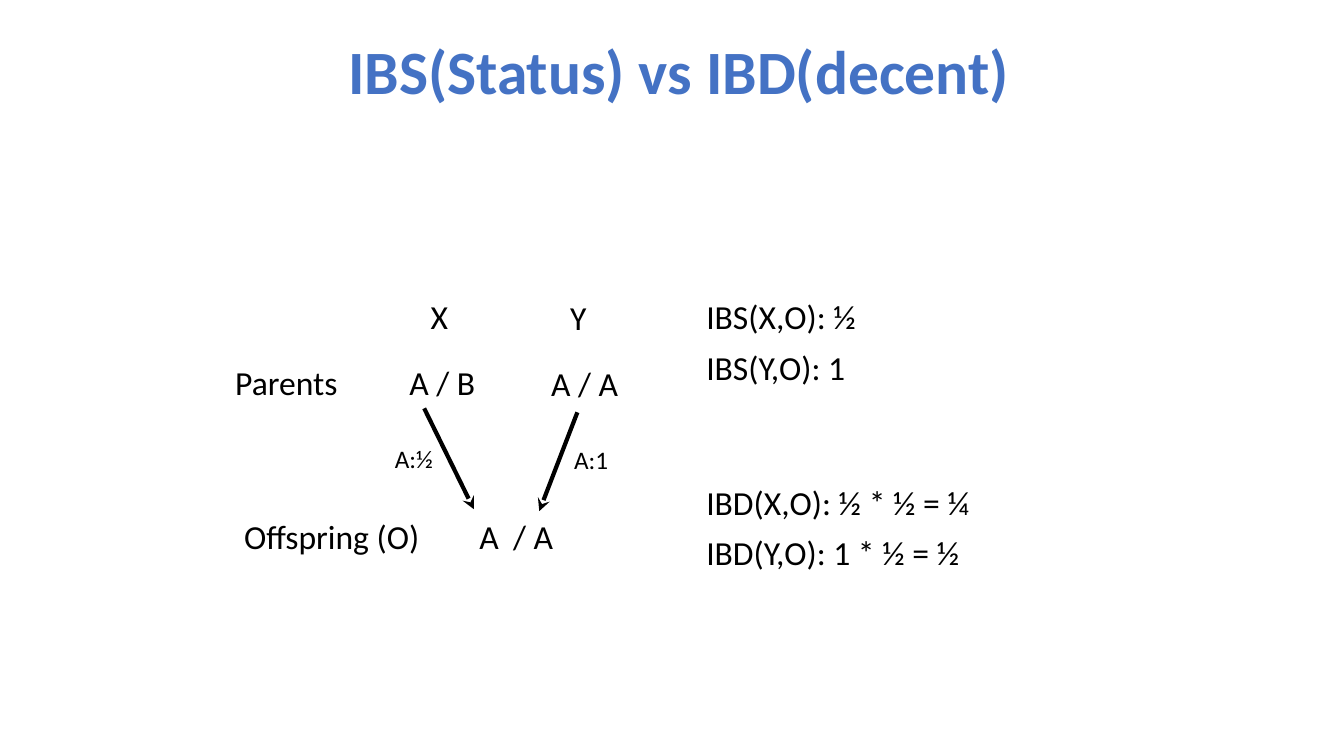
from collections import namedtuple
from dataclasses import dataclass

from lxml.etree import SubElement
from pptx import Presentation
from pptx.dml.color import RGBColor
from pptx.enum.shapes import MSO_CONNECTOR as Connector
from pptx.enum.text import MSO_ANCHOR as Anchor, PP_ALIGN as Align
from pptx.oxml.ns import qn
from pptx.util import Cm, Pt


@dataclass(frozen=True)
class Theme:
    font: str = "Calibri"
    title_color: RGBColor = RGBColor(0x44, 0x72, 0xC4)
    ink: RGBColor = RGBColor(0, 0, 0)
    title_size: int = 44
    body_size: int = 24
    small_size: int = 18
    arrow_width: int = 3


THEME = Theme()
LINE_HEIGHT = 1.27

# Lengths in centimetres
Box = namedtuple("Box", "left top width height")


def add_text(slide, text, box, *, size=THEME.body_size, color=THEME.ink,
             bold=False, align=Align.CENTER, anchor=Anchor.TOP, spacing=1.0):
    shape = slide.shapes.add_textbox(*(Cm(length) for length in box))
    frame = shape.text_frame
    frame.word_wrap = True
    frame.vertical_anchor = anchor
    paragraph = frame.paragraphs[0]
    paragraph.alignment = align
    paragraph.line_spacing = spacing
    run = paragraph.add_run()
    run.text = text
    run.font.name = THEME.font
    run.font.size = Pt(size)
    run.font.bold = bold
    run.font.color.rgb = color


def add_arrow(slide, start, end):
    points = [Cm(length) for length in (*start, *end)]
    arrow = slide.shapes.add_connector(Connector.STRAIGHT, *points)
    arrow.line.color.rgb = THEME.ink
    arrow.line.width = Pt(THEME.arrow_width)
    SubElement(arrow.line._get_or_add_ln(), qn("a:tailEnd"), type="stealth")
    SubElement(arrow._element.spPr, qn("a:effectLst"))


def add_title(slide, box):
    add_text(slide, "IBS(Status) vs IBD(decent)", box, size=THEME.title_size,
             color=THEME.title_color, bold=True, anchor=Anchor.MIDDLE, spacing=0.9)


def add_pedigree(slide, box):
    parents_row, offspring_row = 1.68, box.height - LINE_HEIGHT

    # Names, row labels and genotypes: text, left, top, width
    for text, left, top, width in (
        ("X", 5.56, 0, 2.69),
        ("Y", 9.06, 0.03, 2.69),
        ("Parents", 0, parents_row, 6.1),
        ("A / B", 5.63, parents_row, 2.69),
        ("A / A", 9.22, parents_row + 0.02, 2.69),
        ("Offspring (O)", 1.14, offspring_row, 6.1),
        ("A", 6.9, offspring_row, 2.51),
        ("/ A", 8.48, offspring_row, 1.57),
    ):
        add_text(slide, text, Box(box.left + left, box.top + top, width, LINE_HEIGHT))

    # Transmitted alleles: label, label position, arrow start and end
    for label, position, *ends in (
        ("A:½", (5.53, 3.73), (6.52, 2.97), (7.77, 5.51)),
        ("A:1", (10.05, 3.76), (10.38, 3.07), (9.42, 5.56)),
    ):
        left, top = position
        add_text(slide, label, Box(box.left + left, box.top + top, 1.65, 1.02),
                 size=THEME.small_size, align=Align.LEFT)
        add_arrow(slide, *((box.left + x, box.top + y) for x, y in ends))


def add_results(slide, box, lines):
    pitch = box.height / len(lines)
    for index, line in enumerate(lines):
        add_text(slide, line,
                 Box(box.left, box.top + index * pitch, box.width, LINE_HEIGHT),
                 align=Align.LEFT)


def main():
    presentation = Presentation()
    presentation.slide_width, presentation.slide_height = Cm(33.87), Cm(19.05)
    slide = presentation.slides.add_slide(presentation.slide_layouts[6])

    add_title(slide, Box(2.51, 0.03, 29.21, 3.68))
    add_pedigree(slide, Box(4.17, 7.32, 11.91, 6.83))
    add_results(slide, Box(17.55, 7.32, 12.06, 2.58),
                ("IBS(X,O): ½", "IBS(Y,O): 1"))
    add_results(slide, Box(17.55, 12.01, 11.68, 2.56),
                ("IBD(X,O): ½ * ½ = ¼", "IBD(Y,O): 1 * ½ = ½"))
    presentation.save("out.pptx")


if __name__ == "__main__":
    main()
